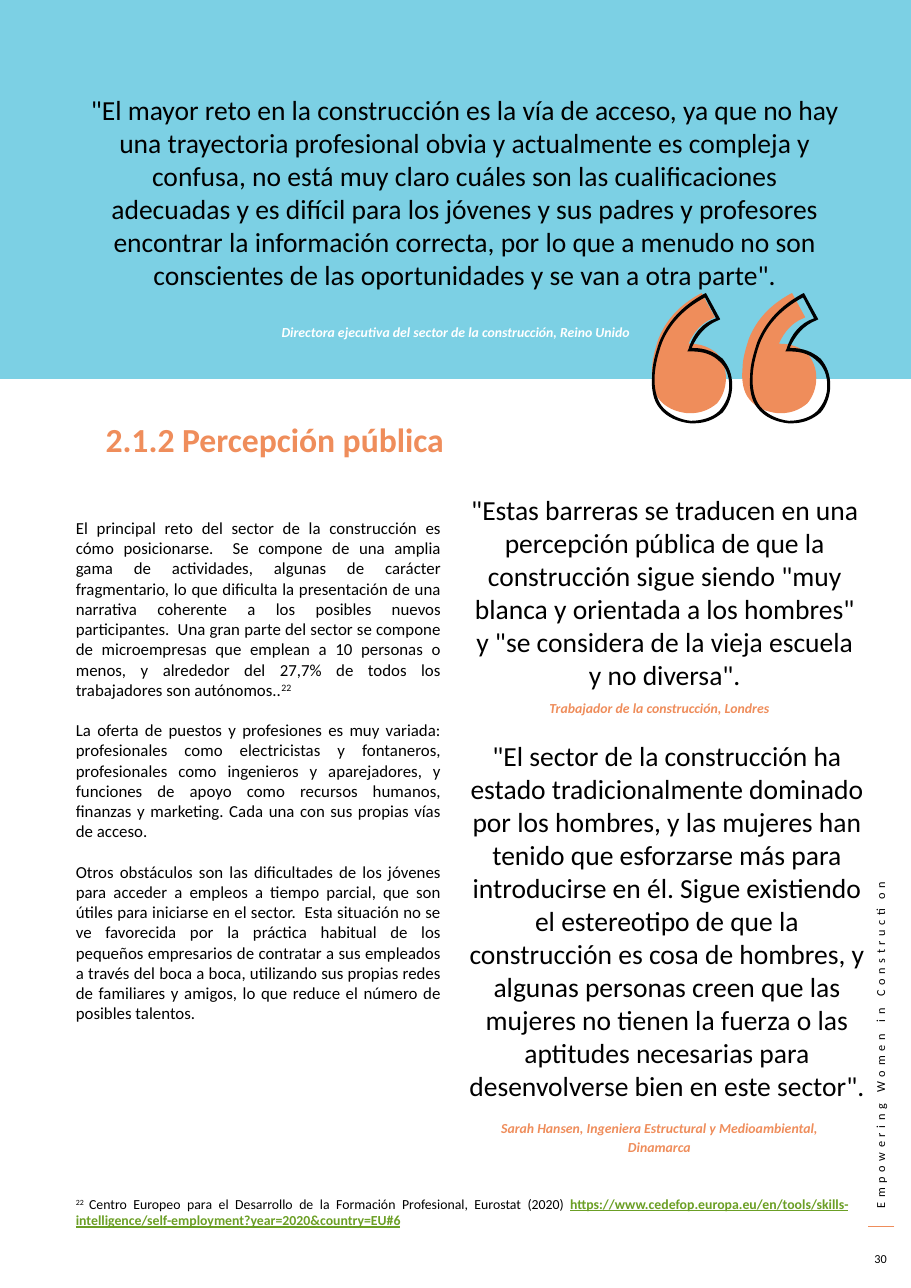
from dataclasses import dataclass

from lxml import etree
from pptx import Presentation
from pptx.dml.color import RGBColor
from pptx.enum.shapes import MSO_CONNECTOR, MSO_SHAPE
from pptx.enum.text import MSO_ANCHOR, PP_ALIGN
from pptx.oxml.ns import qn
from pptx.util import Inches, Pt

LEFT, CENTER, JUSTIFY = PP_ALIGN.LEFT, PP_ALIGN.CENTER, PP_ALIGN.JUSTIFY
TOP, MIDDLE = MSO_ANCHOR.TOP, MSO_ANCHOR.MIDDLE
RECTANGLE, STRAIGHT = MSO_SHAPE.RECTANGLE, MSO_CONNECTOR.STRAIGHT
FONT = "Calibri"
ORANGE, SKY, BLACK, INK, WHITE, GREEN = "EF8D5B", "7CD0E4", "000000", "010101", "FFFFFF", "6B9F25"

Step = list[tuple[float, float]]


@dataclass
class Span:
    text: str
    size: float
    color: str = BLACK
    bold: bool = False
    italic: bool = False
    underline: bool = False
    superscript: bool = False
    spacing: float = 0


@dataclass
class TextBlock:
    left: float
    top: float
    width: float
    height: float
    paras: list[list[Span]]
    align: PP_ALIGN = LEFT
    anchor: MSO_ANCHOR = TOP
    line_spacing: float = 1.0
    para_gap: float = 0
    columns: int = 1
    column_gap: float = 0
    rotation: float = 0


def quote(left: float, top: float, width: float, height: float, text: str) -> TextBlock:
    return TextBlock(left, top, width, height, [[Span(text, 18)]], CENTER, MIDDLE)


def credit(left: float, top: float, text: str, color: str = ORANGE) -> TextBlock:
    span = Span(text, 9, color, bold=True, italic=True)
    return TextBlock(left, top, 3.57, 0.43, [[span]], CENTER, line_spacing=1.15)


SIDE_TITLE = TextBlock(6.26, 9.21, 3.47, 0.24,
                       [[Span("Empowering Women in Construction", 8, spacing=3)]], rotation=270)
BLOCKS = [
    quote(0.72, 0.48, 7, 2.53,
          '"El mayor reto en la construcción es la vía de acceso, ya que no hay una trayectoria '
          'profesional obvia y actualmente es compleja y confusa, no está muy claro cuáles son las '
          'cualificaciones adecuadas y es difícil para los jóvenes y sus padres y profesores '
          'encontrar la información correcta, por lo que a menudo no son conscientes de las '
          'oportunidades y se van a otra parte".'),
    TextBlock(7.8, 11.28, 0.39, 0.29, [[Span("30", 8)]], CENTER, MIDDLE),
    TextBlock(0.59, 4.65, 7.14, 5.46, [
        [Span("El principal reto del sector de la construcción es cómo posicionarse.  Se compone de "
              "una amplia gama de actividades, algunas de carácter fragmentario, lo que dificulta la "
              "presentación de una narrativa coherente a los posibles nuevos participantes.  Una gran "
              "parte del sector se compone de microempresas que emplean a 10 personas o menos, y "
              "alrededor del 27,7% de todos los trabajadores son autónomos..", 11),
         Span("22 ", 11, superscript=True)],
        [Span("La oferta de puestos y profesiones es muy variada: profesionales como electricistas y "
              "fontaneros, profesionales como ingenieros y aparejadores, y funciones de apoyo como "
              "recursos humanos, finanzas y marketing. Cada una con sus propias vías de acceso.", 11)],
        [Span("Otros obstáculos son las dificultades de los jóvenes para acceder a empleos a tiempo "
              "parcial, que son útiles para iniciarse en el sector.  Esta situación no se ve "
              "favorecida por la práctica habitual de los pequeños empresarios de contratar a sus "
              "empleados a través del boca a boca, utilizando sus propias redes de familiares y "
              "amigos, lo que reduce el número de posibles talentos.", 11)],
    ], JUSTIFY, para_gap=13.2, columns=2, column_gap=0.31),
    TextBlock(0.86, 3.75, 3.57, 0.48, [[Span("2.1.2 Percepción pública", 22, ORANGE, bold=True)]]),
    TextBlock(0.59, 10.8, 7.21, 0.89, [[
        Span("22 ", 9, superscript=True),
        Span("Centro Europeo para el Desarrollo de la Formación Profesional, Eurostat (2020) ", 9),
        Span("https://www.cedefop.europa.eu/en/tools/skills-intelligence/self-employment"
             "?year=2020&country=EU#6", 9, GREEN, bold=True, underline=True),
    ]], JUSTIFY),
    credit(2.35, 2.87, "Directora ejecutiva del sector de la construcción, Reino Unido", WHITE),
    quote(4.16, 4.51, 3.75, 1.73,
          '"Estas barreras se traducen en una percepción pública de que la construcción sigue siendo '
          '"muy blanca y orientada a los hombres" y "se considera de la vieja escuela y no diversa".'),
    credit(4.2, 6.28, "Trabajador de la construcción, Londres"),
    quote(4.11, 6.68, 3.89, 3.35,
          '"El sector de la construcción ha estado tradicionalmente dominado por los hombres, y las '
          'mujeres han tenido que esforzarse más para introducirse en él. Sigue existiendo el '
          'estereotipo de que la construcción es cosa de hombres, y algunas personas creen que las '
          'mujeres no tienen la fuerza o las aptitudes necesarias para desenvolverse bien en este '
          'sector".'),
    credit(4.2, 10.09, "Sarah Hansen, Ingeniera Estructural y Medioambiental, Dinamarca"),
]
BLOCKS_BELOW_MARKS = 3

# Each step holds one point for a straight side or three for a Bézier curve.
MARK_EDGE: list[Step] = [
    [(0.35, 1.09)], [(0.34, 1.09), (0.33, 1.09), (0.32, 1.09)],
    [(0.22, 1.08), (0.12, 1.04), (0.06, 0.96)], [(0.01, 0.9), (-0.01, 0.8), (0, 0.69)],
    [(0, 0.6), (0.03, 0.5), (0.06, 0.41)], [(0.13, 0.24), (0.25, 0.11), (0.43, 0.01)],
    [(0.45, 0)], [(0.57, 0.22)], [(0.55, 0.23)],
    [(0.45, 0.27), (0.38, 0.35), (0.33, 0.46)], [(0.34, 0.46)],
    [(0.44, 0.46), (0.52, 0.49), (0.59, 0.55)], [(0.64, 0.61), (0.67, 0.68), (0.67, 0.77)],
    [(0.67, 0.86), (0.64, 0.94), (0.59, 1)], [(0.52, 1.06), (0.44, 1.09), (0.35, 1.09)],
]
MARK_HOLE: list[Step] = [
    [(0.09, 1.03)], [(0.15, 1.1), (0.25, 1.15), (0.35, 1.16)],
    [(0.45, 1.16), (0.55, 1.13), (0.61, 1.07)], [(0.67, 1), (0.7, 0.93), (0.7, 0.84)],
    [(0.7, 0.75), (0.67, 0.67), (0.61, 0.62)], [(0.55, 0.56), (0.47, 0.53), (0.36, 0.53)],
    [(0.32, 0.53)], [(0.33, 0.51)], [(0.37, 0.37), (0.46, 0.27), (0.58, 0.23)],
    [(0.48, 0.04)], [(0.29, 0.14), (0.16, 0.28), (0.09, 0.45)],
    [(0.02, 0.64), (-0.02, 0.88), (0.09, 1.03)],
]
MARK_LEFT, MARK_TOP, OUTLINE_SCALE = 5.92, 2.66, 1.085
OUTLINE_EDGE = [[(x * OUTLINE_SCALE, y * OUTLINE_SCALE) for x, y in step] for step in MARK_EDGE]


def rgb(color: str) -> RGBColor:
    return RGBColor.from_string(color)


def paint(shape, color: str) -> None:
    shape.shadow.inherit = False
    shape.fill.solid()
    shape.fill.fore_color.rgb = rgb(color)
    shape.line.fill.background()


def add_quote_marks(shapes, contours: list[list[Step]], pitch: float, color: str) -> None:
    """Draw a pair of marks, pitch apart, as one freeform with true curves."""
    outlines = [[[(Inches(MARK_LEFT + shift + x), Inches(MARK_TOP + y)) for x, y in step]
                 for step in contour] for shift in (0, pitch) for contour in contours]
    builder = shapes.build_freeform(*outlines[0][0][0])
    for i, outline in enumerate(outlines):
        if i:
            builder.move_to(*outline[0][0])
        builder.add_line_segments([step[-1] for step in outline[1:]], close=True)
    shape = builder.convert_to_shape()
    left, top = shape.left, shape.top
    steps = [step for outline in outlines for step in outline]
    sides = [side for tag in shape.element.iter(qn("a:path")) for side in tag
             if side.tag != qn("a:close")]
    # A closing side may be added by the builder, so sides are matched by their end point.
    remaining = iter(steps)
    step = next(remaining, None)
    for side in sides:
        end = side.find(qn("a:pt"))
        if step is None or (int(end.get("x")) + left, int(end.get("y")) + top) != step[-1]:
            continue
        if len(step) == 3:
            side.tag = qn("a:cubicBezTo")
            for x, y in reversed(step[:2]):
                control = etree.Element(qn("a:pt"), x=str(x - left), y=str(y - top))
                side.insert(0, control)
        step = next(remaining, None)
    paint(shape, color)


def add_text(page, block: TextBlock) -> None:
    box = page.shapes.add_textbox(*map(Inches, (block.left, block.top, block.width, block.height)))
    box.rotation = block.rotation
    frame = box.text_frame
    frame.word_wrap = True
    frame.vertical_anchor = block.anchor
    if block.columns > 1:
        body = box.element.txBody.find(qn("a:bodyPr"))
        body.set("numCol", str(block.columns))
        body.set("spcCol", str(Inches(block.column_gap)))
    for i, spans in enumerate(block.paras):
        para = frame.add_paragraph() if i else frame.paragraphs[0]
        para.alignment = block.align
        para.line_spacing = block.line_spacing
        para.space_before = Pt(block.para_gap if i else 0)
        for span in spans:
            run = para.add_run()
            run.text = span.text
            font = run.font
            font.name, font.size = FONT, Pt(span.size)
            font.bold, font.italic, font.underline = span.bold, span.italic, span.underline
            font.color.rgb = rgb(span.color)
            properties = run._r.get_or_add_rPr()
            if span.superscript:
                properties.set("baseline", "30000")
            if span.spacing:
                properties.set("spc", str(int(span.spacing * 100)))


def main() -> None:
    deck = Presentation()
    deck.slide_width, deck.slide_height = Inches(8.27), Inches(11.69)
    page = deck.slides.add_slide(deck.slide_layouts[6])
    add_text(page, SIDE_TITLE)
    rule = page.shapes.add_connector(STRAIGHT, *map(Inches, (8.12, 11.13, 7.88, 11.13)))
    rule.line.color.rgb = rgb(ORANGE)
    rule.line.width = Pt(1)
    etree.SubElement(rule.element.spPr, qn("a:effectLst"))
    paint(page.shapes.add_shape(RECTANGLE, *map(Inches, (0, -0.05, 8.27, 3.49))), SKY)
    for block in BLOCKS[:BLOCKS_BELOW_MARKS]:
        add_text(page, block)
    marks = page.shapes.add_group_shape().shapes
    add_quote_marks(marks, [MARK_EDGE], 0.82, ORANGE)
    add_quote_marks(marks, [OUTLINE_EDGE, MARK_HOLE], 0.89, INK)
    for block in BLOCKS[BLOCKS_BELOW_MARKS:]:
        add_text(page, block)
    deck.save("out.pptx")


if __name__ == "__main__":
    main()
